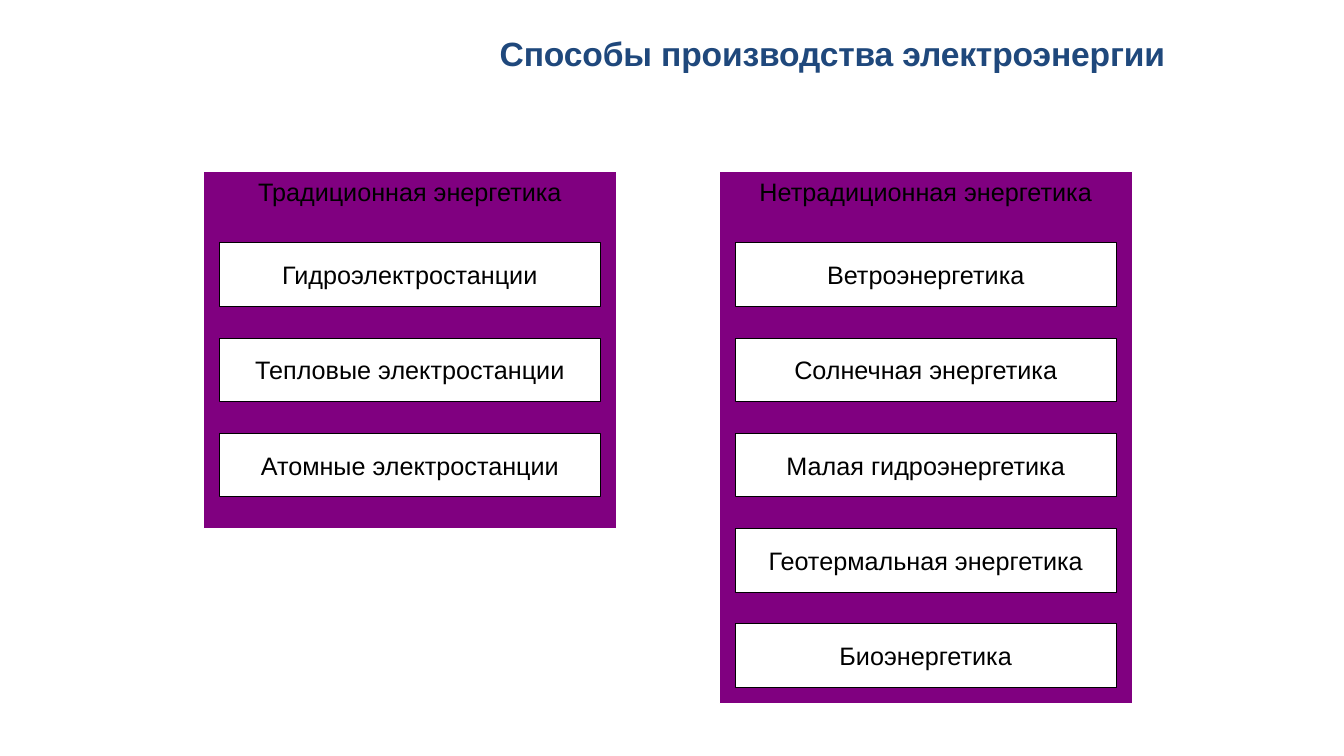
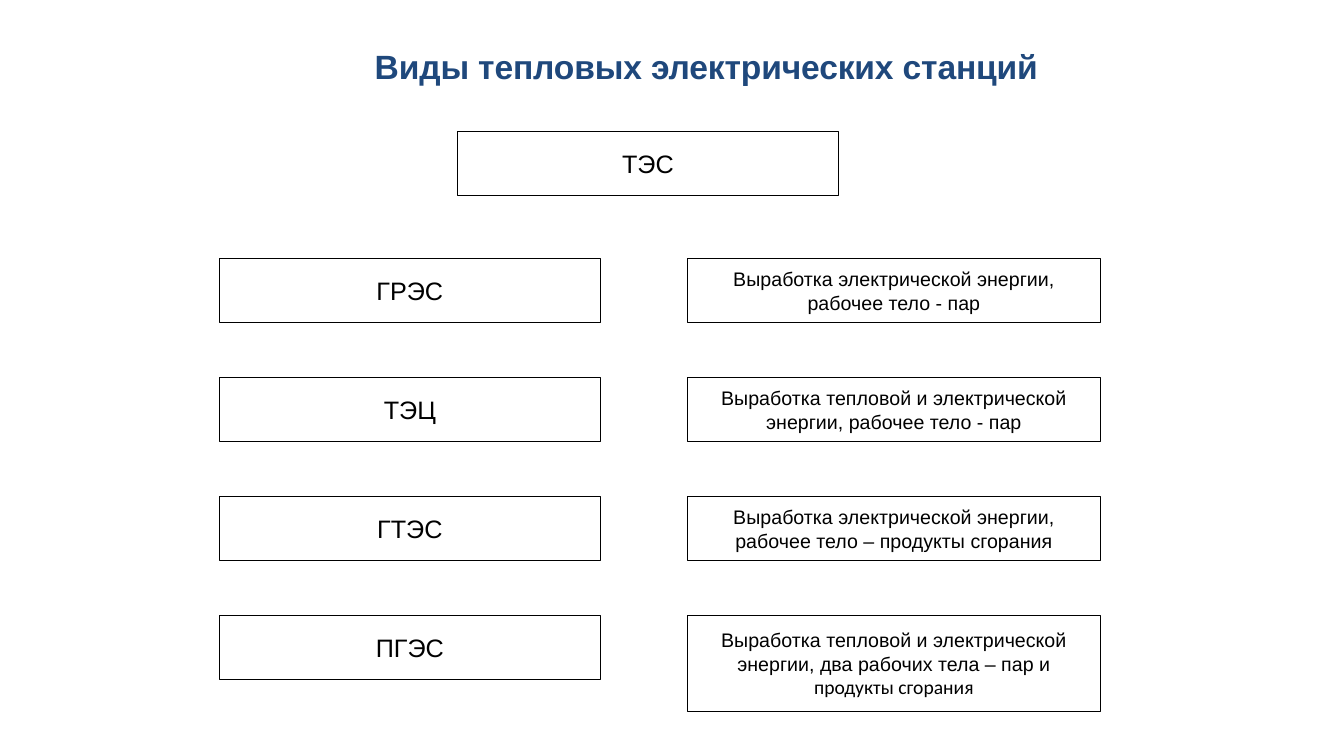
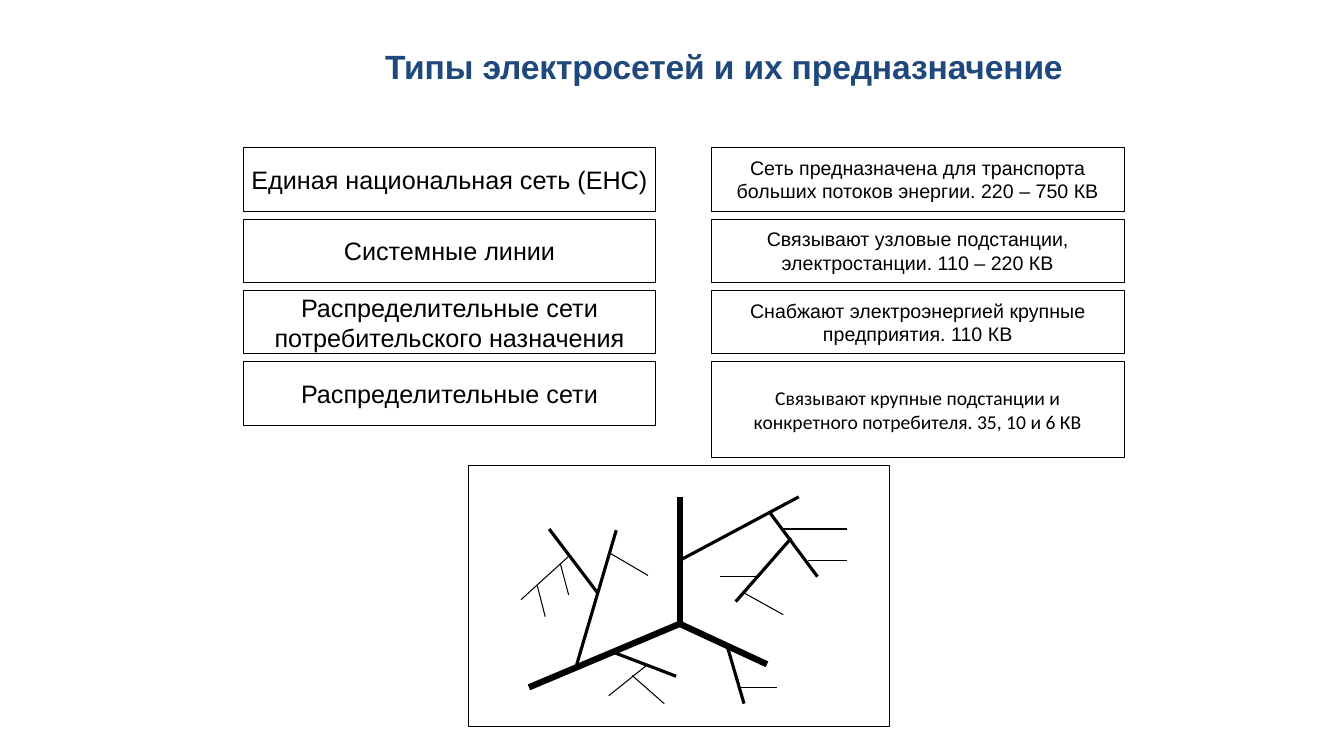
from lxml.etree import SubElement
from pptx import Presentation
from pptx.dml.color import RGBColor
from pptx.enum.shapes import MSO_CONNECTOR as Connector, MSO_SHAPE as Shape
from pptx.enum.text import MSO_ANCHOR as Anchor, MSO_AUTO_SIZE as AutoSize, PP_ALIGN as Align
from pptx.oxml.ns import qn
from pptx.util import Cm, Pt

BLACK = RGBColor(0x00, 0x00, 0x00)
WHITE = RGBColor(0xFF, 0xFF, 0xFF)
PURPLE = RGBColor(0x80, 0x00, 0x80)
NAVY = RGBColor(0x1F, 0x48, 0x7C)

# Box sizes in centimetres
NARROW, WIDE = 9.6, 10.4
LOW, HIGH = 1.6, 2.4


class Deck:
    """Holds the shared style and the current slide."""

    font = "Arial"
    alternate_font = "Calibri"
    thin = 0.75

    def __init__(self):
        self.presentation = Presentation()
        self.presentation.slide_width = Cm(33.87)
        self.presentation.slide_height = Cm(19.05)
        self.slide = None

    def add_slide(self, title, left, top, width):
        layout = self.presentation.slide_layouts[5]
        self.slide = self.presentation.slides.add_slide(layout)
        placeholder = self.slide.shapes.title
        placeholder.left, placeholder.top = Cm(left), Cm(top)
        placeholder.width, placeholder.height = Cm(width), Cm(1.27)
        frame = placeholder.text_frame
        frame.word_wrap = False
        frame.auto_size = AutoSize.SHAPE_TO_FIT_TEXT
        frame.vertical_anchor = Anchor.TOP
        paragraph = frame.paragraphs[0]
        paragraph.alignment = Align.LEFT
        run = self.add_run(paragraph, title, 24, NAVY)
        run.font.bold = True
        run.font._element.set("spc", "-10")

    def add_run(self, paragraph, text, size, color=BLACK, font=None):
        run = paragraph.add_run()
        run.text = text
        run.font.name = font or self.font
        run.font.size = Pt(size)
        run.font.color.rgb = color
        return run

    def add_box(self, left, top, width, height, lines=(), size=18, fill=WHITE,
                line=BLACK, anchor=Anchor.MIDDLE, alternate=()):
        """Draw a rectangle; the line numbers in alternate use the other font."""
        shape = self.slide.shapes.add_shape(
            Shape.RECTANGLE, Cm(left), Cm(top), Cm(width), Cm(height))
        shape.shadow.inherit = False
        shape.fill.solid()
        shape.fill.fore_color.rgb = fill
        shape.line.color.rgb = line
        shape.line.width = Pt(self.thin)
        frame = shape.text_frame
        frame.word_wrap = False
        frame.vertical_anchor = anchor
        for index, text in enumerate(lines):
            paragraph = frame.add_paragraph() if index else frame.paragraphs[0]
            paragraph.alignment = Align.CENTER
            font = self.alternate_font if index in alternate else self.font
            self.add_run(paragraph, text, size, font=font)

    def add_panel(self, left, top, height, heading, items):
        """Draw a purple panel with a heading and a column of cards."""
        self.add_box(left, top, WIDE, height, [heading], fill=PURPLE,
                     line=WHITE, anchor=Anchor.TOP)
        for index, item in enumerate(items):
            self.add_box(left + 0.4, top + 1.8 + index * 2.4, NARROW, LOW, [item])

    def add_pairs(self, name_left, name_width, note_left, top, pitch, rows):
        """Draw rows of a name box and a note box; the last note is taller."""
        for index, (names, notes, alternate) in enumerate(rows):
            row_top = top + index * pitch
            note_height = HIGH if index == len(rows) - 1 else LOW
            self.add_box(name_left, row_top, name_width, LOW, names)
            self.add_box(note_left, row_top, WIDE, note_height, notes,
                         size=14, alternate=alternate)

    def add_line(self, start_x, start_y, end_x, end_y, weight):
        connector = self.slide.shapes.add_connector(
            Connector.STRAIGHT, Cm(start_x), Cm(start_y), Cm(end_x), Cm(end_y))
        connector.line.color.rgb = BLACK
        connector.line.width = Pt(weight)
        SubElement(connector._element.spPr, qn("a:effectLst"))


TRADITIONAL = ["Гидроэлектростанции", "Тепловые электростанции", "Атомные электростанции"]
ALTERNATIVE = ["Ветроэнергетика", "Солнечная энергетика", "Малая гидроэнергетика",
               "Геотермальная энергетика", "Биоэнергетика"]

# Rows: name lines, note lines, note lines in the alternate font
STATIONS = [
    (["ГРЭС"], ["Выработка электрической энергии,", "рабочее тело - пар"], ()),
    (["ТЭЦ"], ["Выработка тепловой и электрической", "энергии, рабочее тело - пар"], ()),
    (["ГТЭС"], ["Выработка электрической энергии,", "рабочее тело – продукты сгорания"], ()),
    (["ПГЭС"], ["Выработка тепловой и электрической",
                "энергии, два рабочих тела – пар и", "продукты сгорания"], (2,)),
]
NETWORKS = [
    (["Единая национальная сеть (ЕНС)"],
     ["Сеть предназначена для транспорта", "больших потоков энергии. 220 – 750 КВ"], ()),
    (["Системные линии"],
     ["Связывают узловые подстанции,", "электростанции. 110 – 220 КВ"], ()),
    (["Распределительные сети", "потребительского назначения"],
     ["Снабжают электроэнергией крупные", "предприятия. 110 КВ"], ()),
    (["Распределительные сети"],
     ["Связывают крупные подстанции и", "конкретного потребителя. 35, 10 и 6 КВ"], (0, 1)),
]

# Network tree: line weight -> start and end points in centimetres
HUB = (17.13, 15.72)
TREE = {
    4.5: [  # trunks
        (13.33, 17.32, *HUB), (*HUB, 17.13, 12.52), (19.33, 16.74, *HUB),
    ],
    2.25: [  # branches
        (17.13, 14.12, 20.13, 12.52), (14.53, 16.76, 15.53, 13.36),
        (15.06, 14.94, 13.84, 13.33), (20.6, 14.53, 19.41, 12.93),
        (19.94, 13.56, 18.54, 15.16), (18.34, 16.33, 18.75, 17.73),
        (15.44, 16.43, 17.04, 17.04),
    ],
    0.75: [  # twigs
        (15.34, 13.92, 16.33, 14.5), (18.75, 14.94, 19.74, 15.49),
        (19.74, 13.33, 21.34, 13.33), (20.35, 14.12, 21.34, 14.12),
        (18.14, 14.53, 19.13, 14.53), (18.59, 17.32, 19.58, 17.32),
        (15.34, 17.53, 16.33, 16.74), (16.74, 17.73, 15.93, 17.02),
        (14.33, 14.02, 13.13, 15.11), (13.54, 14.76, 13.74, 15.54),
        (14.12, 14.2, 14.33, 14.99),
    ],
}


def main():
    deck = Deck()

    # Ways of producing electricity
    deck.add_slide("Способы производства электроэнергии", 12.34, 0.71, 17.4)
    deck.add_panel(5.13, 4.32, 9, "Традиционная энергетика", TRADITIONAL)
    deck.add_panel(18.13, 4.32, 13.4, "Нетрадиционная энергетика", ALTERNATIVE)

    # Kinds of thermal power stations
    deck.add_slide("Виды тепловых электрических станций", 9.19, 1.04, 17.35)
    deck.add_box(11.53, 3.32, NARROW, LOW, ["ТЭС"])
    deck.add_pairs(5.53, NARROW, 17.33, 6.52, 3, STATIONS)

    # Types of networks and their tree
    deck.add_slide("Типы электросетей и их предназначение", 9.45, 1.04, 17.73)
    deck.add_pairs(6.13, WIDE, 17.93, 3.72, 1.8, NETWORKS)
    deck.add_box(11.81, 11.72, 10.6, 6.6)
    for weight, lines in TREE.items():
        for points in lines:
            deck.add_line(*points, weight)

    deck.presentation.save("out.pptx")


if __name__ == "__main__":
    main()
